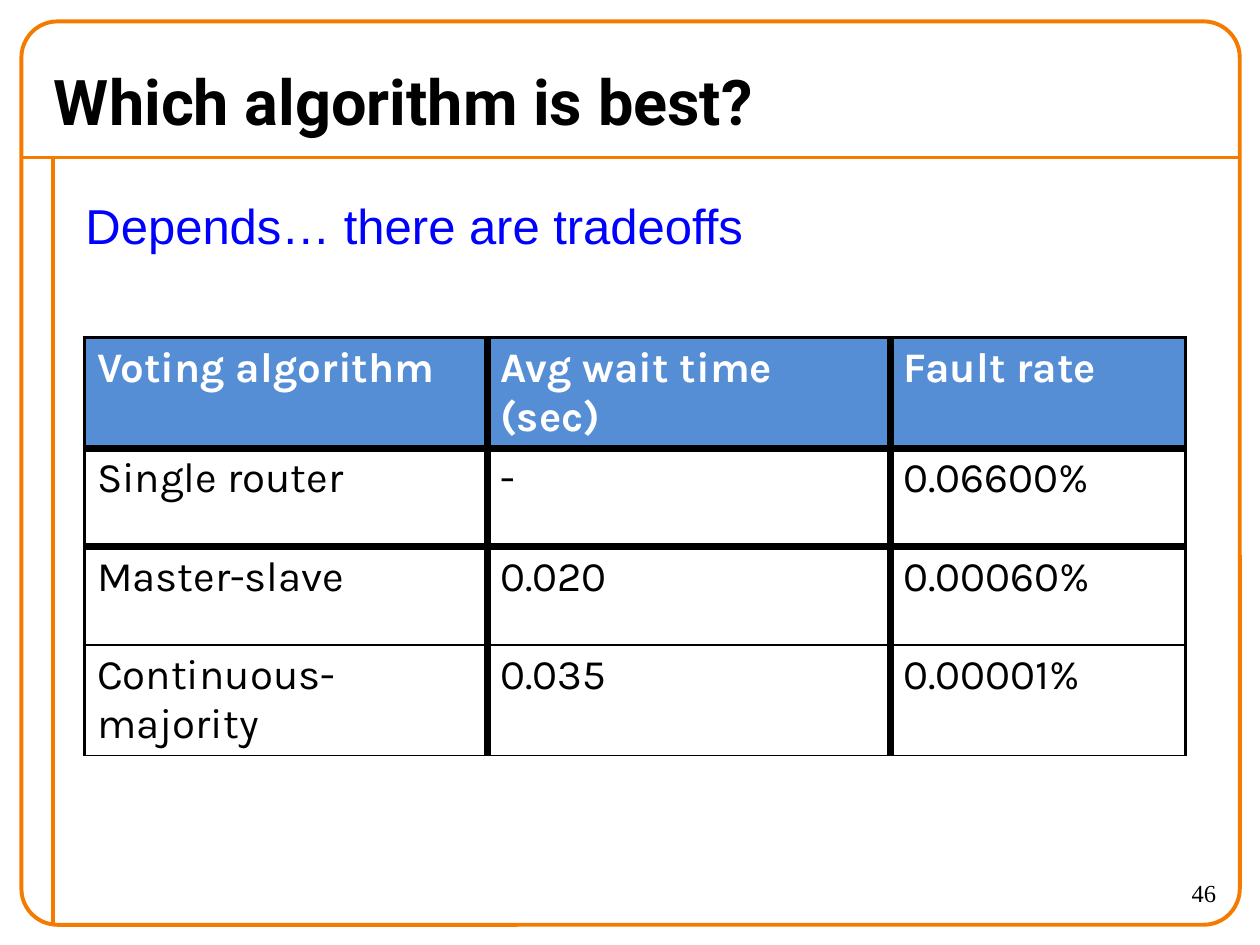
from dataclasses import dataclass

from lxml.etree import SubElement
from pptx import Presentation
from pptx.dml.color import RGBColor
from pptx.enum.shapes import MSO_CONNECTOR, MSO_SHAPE
from pptx.enum.text import MSO_ANCHOR, MSO_AUTO_SIZE, PP_ALIGN
from pptx.oxml.ns import qn
from pptx.util import Inches, Pt

ORANGE, BLACK, WHITE = "F47A00", "000000", "FFFFFF"
HEADER_BLUE, TEXT_BLUE = "558ED5", "0000FF"
RULE_WIDTH = Pt(2.25)

RESULTS = [
    ["Voting algorithm", "Avg wait time (sec)", "Fault rate"],
    ["Single router", "-", "0.06600%"],
    ["Master-slave", "0.020", "0.00060%"],
    ["Continuous-majority", "0.035", "0.00001%"],
]
COLUMN_WIDTHS = [3.2, 3.2, 2.34]
ROW_HEIGHTS = [0.83, 0.78, 0.78, 0.53]
# Border widths in points, one for each grid line of the table
VERTICAL_EDGES = [2.25, 4.5, 4.5, 2.25]
HORIZONTAL_EDGES = [2.25, 4.5, 4.5, 1, 1]


@dataclass
class Label:
    text: str
    box: tuple
    font: dict
    color: str
    frame: dict
    align: PP_ALIGN = PP_ALIGN.LEFT


@dataclass
class Rule:
    start: tuple
    end: tuple


LABELS = [
    Label("Which algorithm is best?", (0.33, 0.42, 8.82, 0.75),
          {"name": "Roboto", "size": Pt(36), "bold": True}, BLACK,
          {"word_wrap": True, "vertical_anchor": MSO_ANCHOR.MIDDLE}),
    Label("Depends… there are tradeoffs", (0.58, 1.5, 5.49, 0.57),
          {"name": "Arial", "size": Pt(28)}, TEXT_BLUE,
          {"word_wrap": False, "auto_size": MSO_AUTO_SIZE.SHAPE_TO_FIT_TEXT}),
    Label("46", (8.75, 6.92, 1, 0.42),
          {"name": "Times New Roman", "size": Pt(14)}, BLACK,
          {"word_wrap": True}, PP_ALIGN.RIGHT),
]
RULES = [Rule((0.17, 1.25), (9.83, 1.25)), Rule((0.42, 1.25), (0.42, 7.33))]


def rgb(color: str) -> RGBColor:
    return RGBColor.from_string(color)


def apply_format(target, values: dict) -> None:
    for name, value in values.items():
        setattr(target, name, value)


def write(text_frame, text: str, font: dict, color: str) -> None:
    run = text_frame.paragraphs[0].add_run()
    run.text = text
    apply_format(run.font, font)
    run.font.color.rgb = rgb(color)


def add_label(slide, label: Label) -> None:
    text_frame = slide.shapes.add_textbox(*map(Inches, label.box)).text_frame
    apply_format(text_frame, label.frame)
    text_frame.paragraphs[0].alignment = label.align
    write(text_frame, label.text, label.font, label.color)


def add_rule(slide, rule: Rule) -> None:
    connector = slide.shapes.add_connector(
        MSO_CONNECTOR.STRAIGHT, *map(Inches, rule.start + rule.end))
    connector.line.color.rgb = rgb(ORANGE)
    connector.line.width = RULE_WIDTH
    SubElement(connector.element.spPr, qn("a:effectLst"))


def add_frame(slide) -> None:
    frame = slide.shapes.add_shape(
        MSO_SHAPE.ROUNDED_RECTANGLE, *map(Inches, (0.17, 0.17, 9.67, 7.17)))
    frame.adjustments[0] = 0.04
    frame.shadow.inherit = False
    frame.fill.background()
    frame.line.color.rgb = rgb(ORANGE)
    frame.line.width = RULE_WIDTH


def add_borders(cell, widths: dict) -> None:
    """Draw black cell borders; call before setting the fill, which must follow them."""
    properties = cell._tc.get_or_add_tcPr()
    for side, width in widths.items():
        border = SubElement(properties, qn(f"a:ln{side}"), w=str(Pt(width)))
        fill = SubElement(border, qn("a:solidFill"))
        SubElement(fill, qn("a:srgbClr"), val=BLACK)


def add_results(slide) -> None:
    table = slide.shapes.add_table(
        len(ROW_HEIGHTS), len(COLUMN_WIDTHS), Inches(0.67), Inches(2.68),
        Inches(sum(COLUMN_WIDTHS)), Inches(sum(ROW_HEIGHTS))).table
    table.horz_banding = False
    for column, width in zip(table.columns, COLUMN_WIDTHS):
        column.width = Inches(width)
    for row, height in zip(table.rows, ROW_HEIGHTS):
        row.height = Inches(height)
    for r, values in enumerate(RESULTS):
        is_header = r == 0
        font = {"name": "Karla", "size": Pt(24), "bold": is_header}
        for c, value in enumerate(values):
            cell = table.cell(r, c)
            add_borders(cell, {"L": VERTICAL_EDGES[c], "R": VERTICAL_EDGES[c + 1],
                               "T": HORIZONTAL_EDGES[r], "B": HORIZONTAL_EDGES[r + 1]})
            if is_header:
                cell.fill.solid()
                cell.fill.fore_color.rgb = rgb(HEADER_BLUE)
            else:
                cell.fill.background()
            write(cell.text_frame, value, font, WHITE if is_header else BLACK)


def main() -> None:
    presentation = Presentation()
    presentation.slide_width, presentation.slide_height = Inches(10), Inches(7.5)
    slide = presentation.slides.add_slide(presentation.slide_layouts[6])
    for rule in RULES:
        add_rule(slide, rule)
    add_frame(slide)
    add_results(slide)
    for label in LABELS:
        add_label(slide, label)
    presentation.save("out.pptx")


if __name__ == "__main__":
    main()
